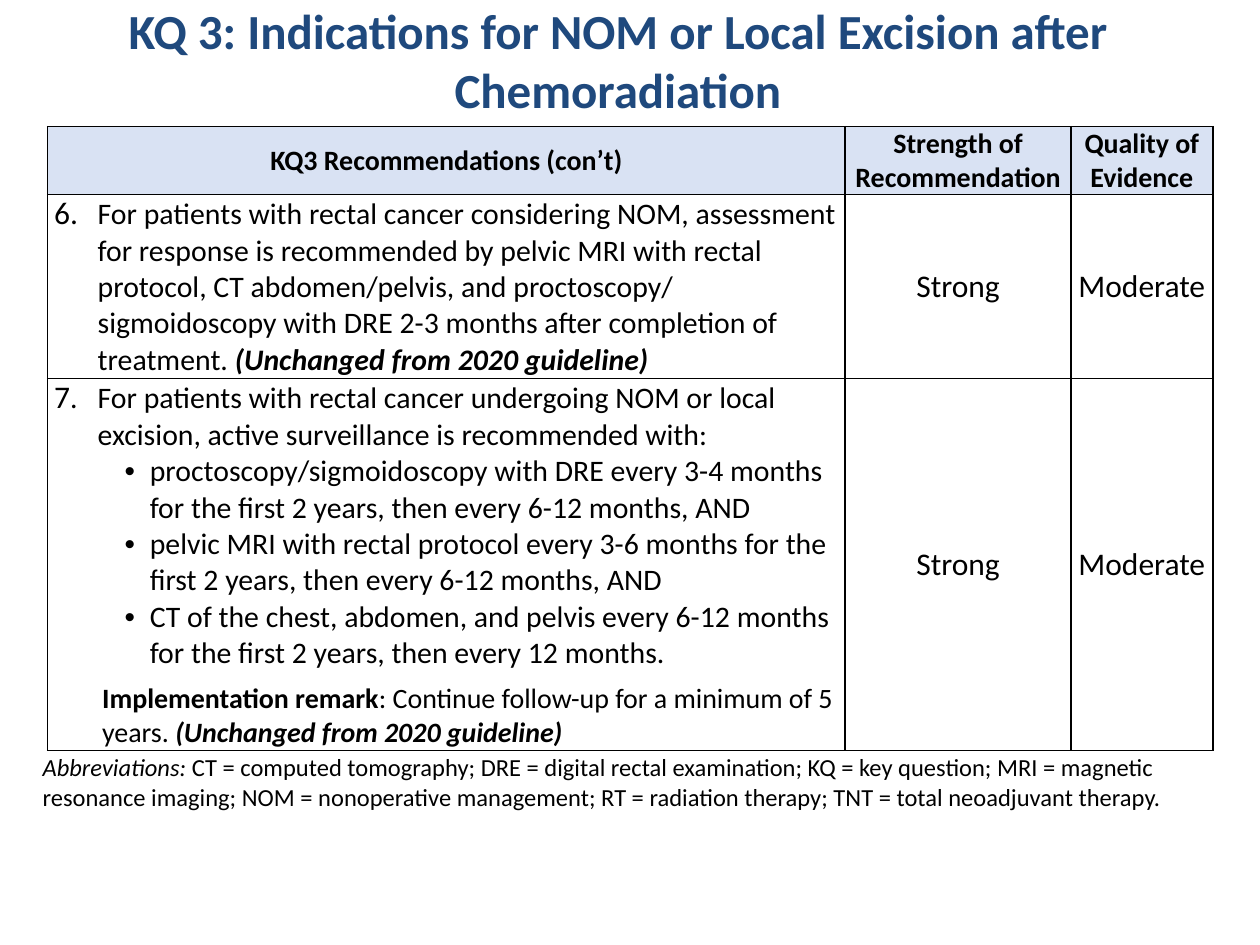
from lxml import etree
from pptx import Presentation
from pptx.dml.color import RGBColor
from pptx.enum.text import MSO_ANCHOR, MSO_AUTO_SIZE, PP_ALIGN
from pptx.oxml.ns import qn
from pptx.util import Cm, Pt

CENTER, LEFT = PP_ALIGN.CENTER, PP_ALIGN.LEFT
MIDDLE, TOP = MSO_ANCHOR.MIDDLE, MSO_ANCHOR.TOP
FIT_SHAPE = MSO_AUTO_SIZE.SHAPE_TO_FIT_TEXT
FONT, BLACK, NAVY, HEADER_FILL = "Calibri", "000000", "1F497D", "D9E2F3"

# Run formats
TITLE = dict(size=28, bold=True, color=NAVY)
HEAD = dict(size=16, bold=True)
RATING = dict(size=18)
BODY = dict(size=17)
REMARK = dict(size=16)
NOTE = dict(size=14)

# Paragraph formats: left margin and first-line indent in cm
MIDDLED = dict(align=CENTER)
NUMBERED = dict(margin=0.88, indent=-0.88)
BULLETED = dict(margin=1.93, indent=-0.51, bullet="•")
REMARKED = dict(margin=0.97, space_before=6)
NOTED = dict(margin=0.15)

# Content: each paragraph is (format, [(text, run format), ...])
UNCHANGED = "(Unchanged from 2020 guideline)"
STRONG_ITALIC = dict(bold=True, italic=True)
title = [(MIDDLED, [("KQ 3: Indications for NOM or Local Excision after Chemoradiation", TITLE)])]
headers = ["KQ3 Recommendations (con’t)", "Strength of Recommendation", "Quality of Evidence"]
surveillance = [
    "proctoscopy/sigmoidoscopy with DRE every 3-4 months for the first 2 years, then every 6-12 months, AND",
    "pelvic MRI with rectal protocol every 3-6 months for the first 2 years, then every 6-12 months, AND",
    "CT of the chest, abdomen, and pelvis every 6-12 months for the first 2 years, then every 12 months.",
]
response = [(NUMBERED, [
    ("6.\t", RATING),
    ("For patients with rectal cancer considering NOM, assessment for response is recommended by "
     "pelvic MRI with rectal protocol, CT abdomen/pelvis, and proctoscopy/ sigmoidoscopy with DRE "
     "2-3 months after completion of treatment. ", BODY),
    (UNCHANGED, BODY | STRONG_ITALIC)])]
follow_up = [
    (NUMBERED, [
        ("7", RATING),
        (".\tFor patients with rectal cancer undergoing NOM or local excision, active surveillance "
         "is recommended with:", BODY)]),
    *[(BULLETED, [(item, BODY)]) for item in surveillance],
    (REMARKED, [
        ("Implementation remark", HEAD),
        (": Continue follow-up for a minimum of 5 years. ", REMARK),
        (UNCHANGED, REMARK | STRONG_ITALIC)]),
]
recommendations = [(response, "Strong", "Moderate"), (follow_up, "Strong", "Moderate")]
abbreviations = [(NOTED, [
    ("Abbreviations:", NOTE | dict(italic=True)),
    (" CT = computed tomography; DRE = digital rectal examination; KQ = key question; MRI = magnetic "
     "resonance imaging; NOM = nonoperative management; RT = radiation therapy; TNT = total "
     "neoadjuvant therapy.", NOTE)])]

col_widths = [16.08, 4.55, 2.86]
row_heights = [1.37, 3.71, 7.5]


def rgb(color):
    return RGBColor.from_string(color)


def write(tf, paragraphs):
    for i, (fmt, runs) in enumerate(paragraphs):
        p = tf.paragraphs[0] if i == 0 else tf.add_paragraph()
        p.alignment = fmt.get("align", LEFT)
        p.space_before = Pt(fmt.get("space_before", 0))
        pPr = p._p.get_or_add_pPr()
        pPr.set("marL", str(Cm(fmt.get("margin", 0))))
        pPr.set("indent", str(Cm(fmt.get("indent", 0))))
        if "bullet" in fmt:
            etree.SubElement(pPr, qn("a:buFont"), typeface="Arial")
            etree.SubElement(pPr, qn("a:buChar"), char=fmt["bullet"])
        else:
            etree.SubElement(pPr, qn("a:buNone"))
        for text, run_fmt in runs:
            r = p.add_run()
            r.text = text
            values = dict(name=FONT, bold=False, italic=False) | run_fmt
            r.font.color.rgb = rgb(values.pop("color", BLACK))
            values["size"] = Pt(values["size"])
            for name, value in values.items():
                setattr(r.font, name, value)


def add_text(s, box, paragraphs, **frame):
    tf = s.shapes.add_textbox(*map(Cm, box)).text_frame
    for name, value in (dict(word_wrap=True) | frame).items():
        setattr(tf, name, value)
    write(tf, paragraphs)


def add_borders(cell):
    tcPr = cell._tc.get_or_add_tcPr()
    for side in ("lnL", "lnR", "lnT", "lnB"):
        ln = etree.SubElement(tcPr, qn(f"a:{side}"), w=str(Pt(1)))
        fill = etree.SubElement(ln, qn("a:solidFill"))
        etree.SubElement(fill, qn("a:srgbClr"), val=BLACK)


def fill_cell(cell, paragraphs, anchor, fill=None):
    frame = dict(margin_left=Cm(0.13), margin_right=Cm(0.13), margin_top=0, margin_bottom=0,
                 vertical_anchor=anchor)
    for name, value in frame.items():
        setattr(cell, name, value)
    add_borders(cell)
    if fill:
        cell.fill.solid()
        cell.fill.fore_color.rgb = rgb(fill)
    else:
        cell.fill.background()
    write(cell.text_frame, paragraphs)


prs = Presentation()
prs.slide_width, prs.slide_height = Cm(25.4), Cm(19.05)
s = prs.slides.add_slide(prs.slide_layouts[6])

# Title
add_text(s, (1.24, -0.14, 22.43, 2.69), title, vertical_anchor=MIDDLE)

# Recommendations table
table = s.shapes.add_table(len(row_heights), len(col_widths), Cm(0.96), Cm(2.55),
                           Cm(sum(col_widths)), Cm(sum(row_heights))).table
for column, width in zip(table.columns, col_widths):
    column.width = Cm(width)
for row, height in zip(table.rows, row_heights):
    row.height = Cm(height)
for col, text in enumerate(headers):
    fill_cell(table.cell(0, col), [(MIDDLED, [(text, HEAD)])], MIDDLE, HEADER_FILL)
for row, (recommendation, *ratings) in enumerate(recommendations, 1):
    fill_cell(table.cell(row, 0), recommendation, TOP)
    for col, rating in enumerate(ratings, 1):
        fill_cell(table.cell(row, col), [(MIDDLED, [(rating, RATING)])], MIDDLE)

# Abbreviations
add_text(s, (0.46, 15.04, 23.98, 1.45), abbreviations, auto_size=FIT_SHAPE)

prs.save("out.pptx")
